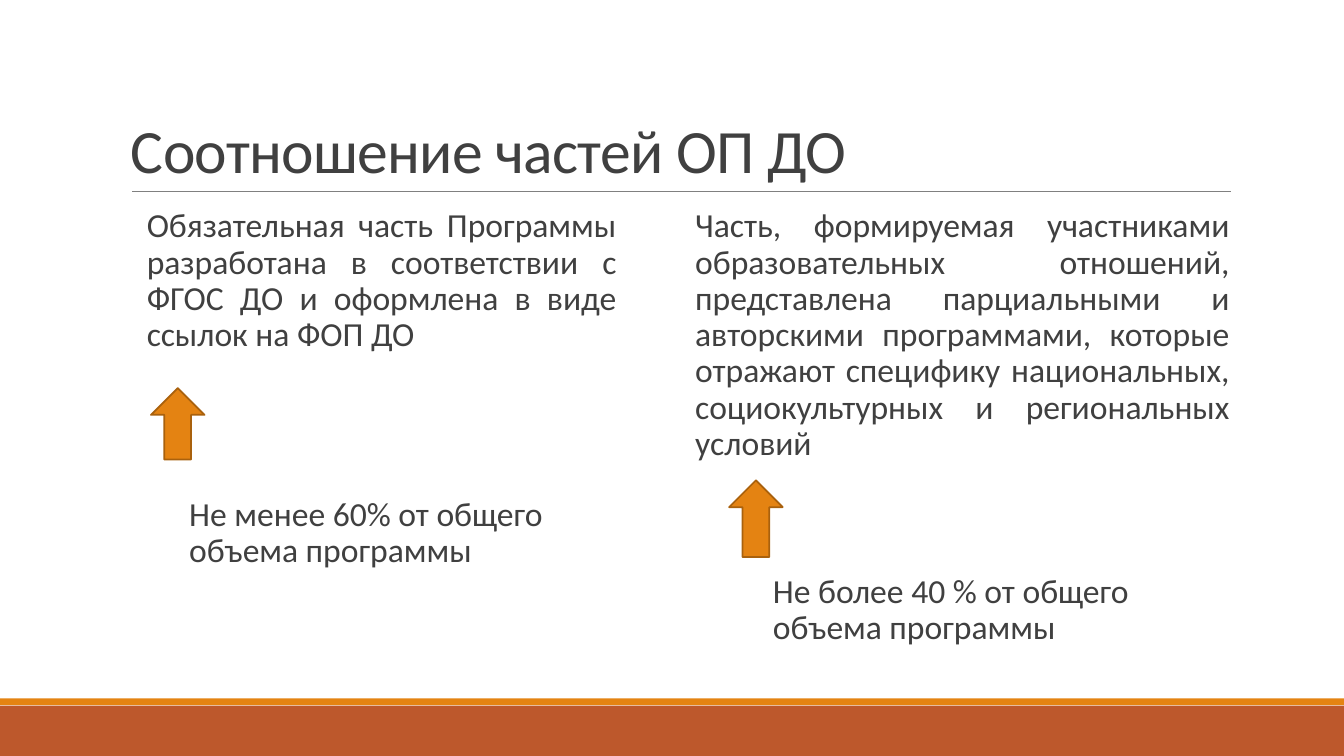
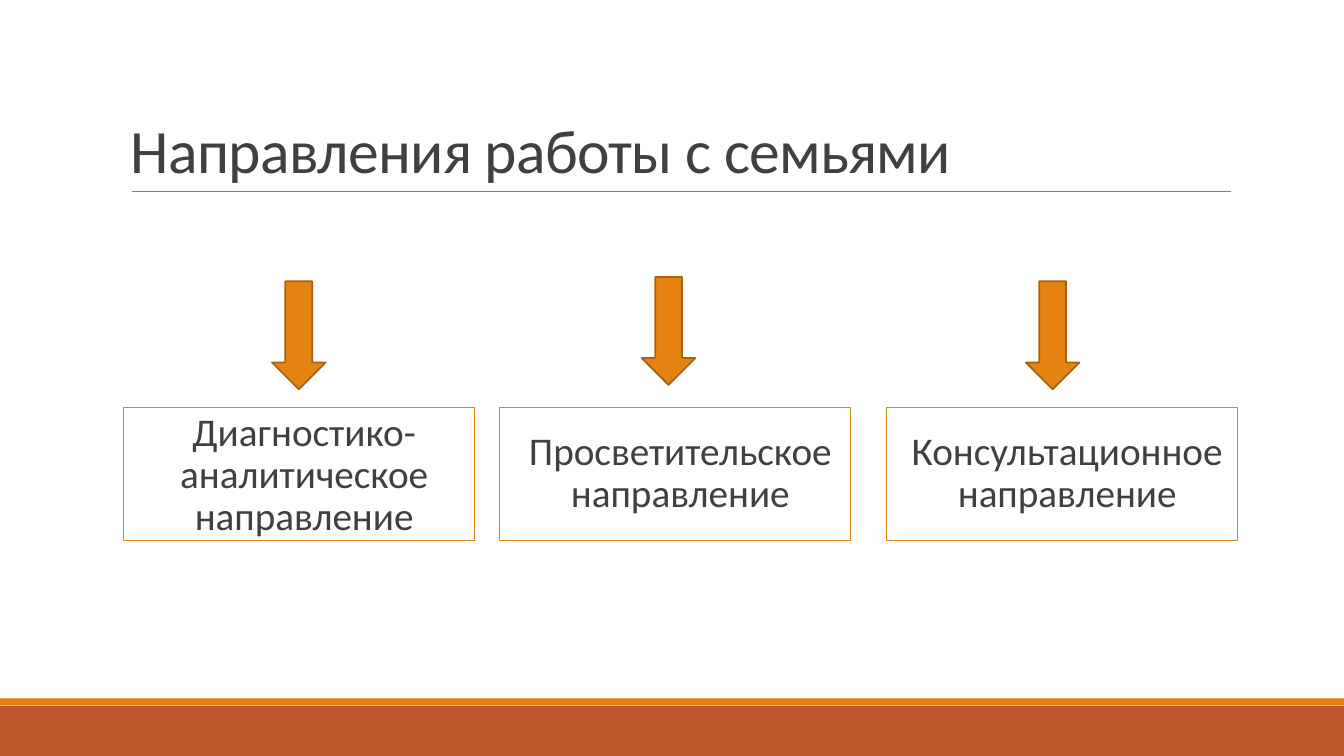
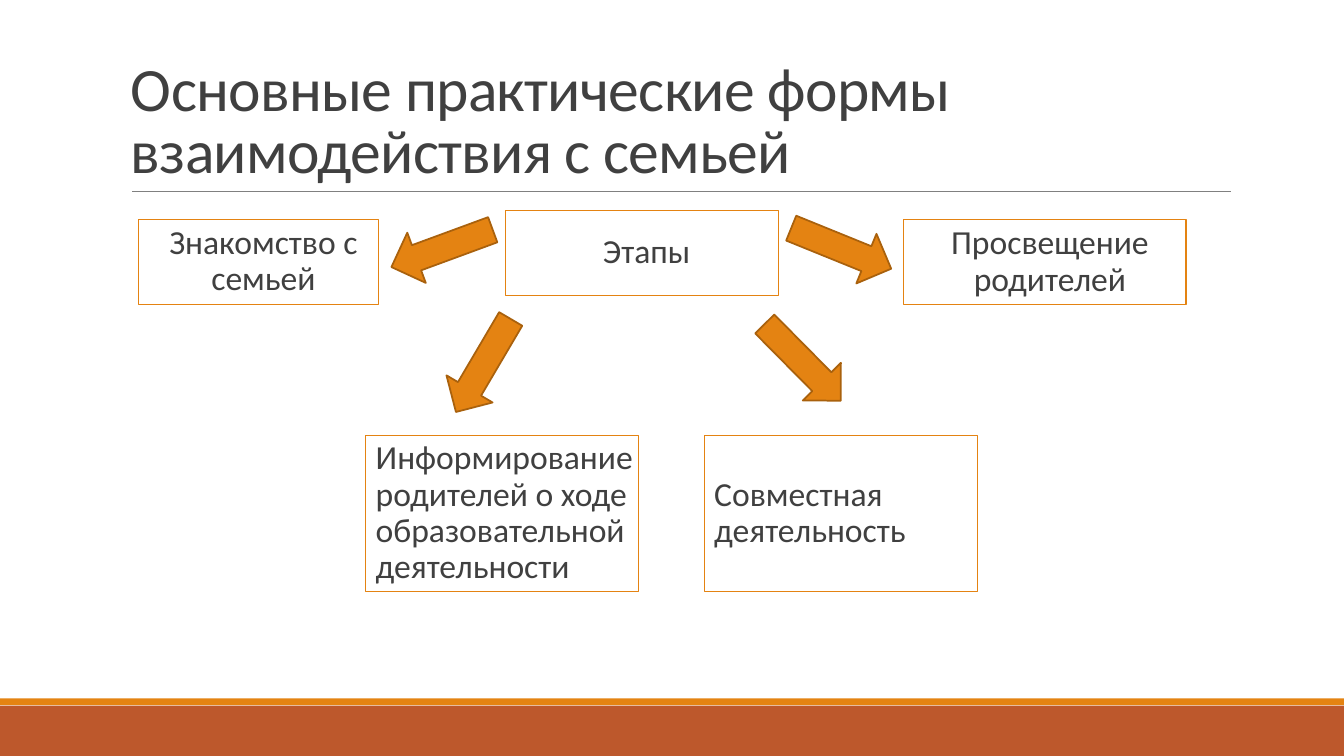
"""Build three slides on the parts of a preschool programme and work with families."""
import pptx
import pptx.dml.color
import pptx.enum.shapes
import pptx.enum.text
import pptx.oxml.xmlchemy
import pptx.util
from pptx.util import Cm

FONT = "Calibri"
INK = "404040"
ORANGE = "E48312"
RUST = "BD582C"
BROWN = "A9610D"
GREY = "808080"

WIDTH, HEIGHT = 33.87, 19.05
ARROW_WIDTH = 1.35
BODY_INSETS = (0.25, 0.13, 0, 0.13)
TITLE_INSETS = (0.25, 0.13, 0.25, 0.13)

SHAPE = pptx.enum.shapes.MSO_SHAPE
ALIGN = pptx.enum.text.PP_ALIGN
ANCHOR = pptx.enum.text.MSO_ANCHOR


def colour(value):
    """Return the colour for a hex string."""
    return pptx.dml.color.RGBColor.from_string(value)


def write(box, text, size, align, anchor, insets, spacing):
    """Put one formatted paragraph into a box and return the paragraph."""
    frame = box.text_frame
    frame.word_wrap = True
    frame.vertical_anchor = anchor
    frame.margin_left, frame.margin_top, frame.margin_right, frame.margin_bottom = map(Cm, insets)
    paragraph = frame.paragraphs[0]
    paragraph.add_run().text = text
    paragraph.alignment = align
    paragraph.line_spacing = spacing
    paragraph.font.name = FONT
    paragraph.font.size = pptx.util.Pt(size)
    paragraph.font.color.rgb = colour(INK)
    return paragraph


def add_preset(page, kind, area, fill=None, line=None, weight=0.75):
    """Add a preset shape with an optional fill and outline."""
    shape = page.shapes.add_shape(kind, *map(Cm, area))
    shape.shadow.inherit = False
    if fill:
        shape.fill.solid()
        shape.fill.fore_color.rgb = colour(fill)
    else:
        shape.fill.background()
    if line:
        shape.line.color.rgb = colour(line)
        shape.line.width = pptx.util.Pt(weight)
    else:
        shape.line.fill.background()
    return shape


def add_rule(page, left, right, top):
    """Add the thin line below the title."""
    rule = page.shapes.add_connector(
        pptx.enum.shapes.MSO_CONNECTOR.STRAIGHT, Cm(left), Cm(top), Cm(right), Cm(top))
    rule.line.color.rgb = colour(GREY)
    rule.line.width = pptx.util.Pt(0.5)
    rule._element.spPr.append(pptx.oxml.xmlchemy.OxmlElement("a:effectLst"))


def add_page(deck, title):
    """Add a slide with the footer bands, the rule and a title."""
    page = deck.slides.add_slide(deck.slide_layouts[6])
    add_preset(page, SHAPE.RECTANGLE, (0, 17.78, WIDTH, 1.27), RUST)
    add_preset(page, SHAPE.RECTANGLE, (0, 17.6, WIDTH, 0.17), ORANGE)
    add_rule(page, 3.33, 31.01, 4.83)
    box = page.shapes.add_textbox(*map(Cm, (3.05, 0.79, 27.94, 4.04)))
    paragraph = write(box, title, 44, ALIGN.LEFT, ANCHOR.BOTTOM, TITLE_INSETS, 0.85)
    paragraph.runs[0].font._element.set("spc", "-50")
    return page


def add_body(page, text, area, align=ALIGN.LEFT):
    """Add plain body text without a frame."""
    box = page.shapes.add_textbox(*map(Cm, area))
    write(box, text, 24, align, ANCHOR.TOP, BODY_INSETS, 0.9)


def add_card(page, text, area, size=24, align=ALIGN.CENTER, anchor=ANCHOR.MIDDLE):
    """Add text in an orange outline."""
    card = add_preset(page, SHAPE.RECTANGLE, area, line=ORANGE)
    paragraph = write(card, text, size, align, anchor, BODY_INSETS, 0.9)
    paragraph.space_before = pptx.util.Pt(12)
    paragraph.space_after = pptx.util.Pt(2)


def add_arrow(page, centre, length=2.72, rotation=0, kind=SHAPE.DOWN_ARROW):
    """Add a block arrow around its centre."""
    across, down = centre
    area = (across - ARROW_WIDTH / 2, down - length / 2, ARROW_WIDTH, length)
    add_preset(page, kind, area, ORANGE, BROWN, 1.25).rotation = rotation


def build_shares(deck):
    """Build the slide on the shares of the programme."""
    page = add_page(deck, "Соотношение частей ОП ДО")
    add_body(page, "Обязательная часть Программы разработана в соответствии с ФГОС ДО "
             "и оформлена в виде ссылок на ФОП ДО", (3.45, 5.13, 12.09, 4.65), ALIGN.JUSTIFY)
    add_body(page, "Часть, формируемая участниками образовательных отношений, представлена "
             "парциальными и авторскими программами, которые отражают специфику национальных, "
             "социокультурных и региональных условий", (17.27, 5.13, 13.72, 6.68), ALIGN.JUSTIFY)
    add_arrow(page, (4.48, 10.68), 1.8, kind=SHAPE.UP_ARROW)
    add_arrow(page, (19.05, 13.07), 1.93, kind=SHAPE.UP_ARROW)
    add_body(page, "Не менее 60% от общего объема программы", (4.52, 12.4, 10.59, 2.4))
    add_body(page, "Не более 40 % от общего объема программы", (19.23, 14.35, 10.59, 2.4))


def build_directions(deck):
    """Build the slide on the directions of work with families."""
    page = add_page(deck, "Направления работы с семьями")
    directions = [
        ("Диагностико-аналитическое направление", 3.12, ANCHOR.TOP, (7.53, 8.45)),
        ("Просветительское направление", 12.6, ANCHOR.MIDDLE, (16.85, 8.34)),
        ("Консультационное направление", 22.35, ANCHOR.MIDDLE, (26.53, 8.45)),
    ]
    for text, left, anchor, centre in directions:
        add_card(page, text, (left, 10.26, 8.84, 3.35), 28, anchor=anchor)
        add_arrow(page, centre)


def build_stages(deck):
    """Build the slide on the stages of interaction with a family."""
    page = add_page(deck, "Основные практические формы взаимодействия с семьей")
    add_card(page, "Этапы", (12.73, 5.31, 6.88, 2.13))
    add_card(page, "Знакомство с семьей", (3.48, 5.54, 6.07, 2.13), anchor=ANCHOR.TOP)
    add_card(page, "Просвещение родителей", (22.78, 5.54, 7.11, 2.13))
    add_card(page, "Информирование родителей о ходе образовательной деятельности",
             (9.22, 10.97, 6.88, 3.94), align=ALIGN.LEFT)
    add_card(page, "Совместная деятельность", (17.75, 10.97, 6.88, 3.94), align=ALIGN.LEFT)
    arrows = [((11.14, 6.26), 69.8), ((12.18, 9.21), 30.5),
              ((21.2, 6.26), 292.1), ((20.23, 9.13), 315.3)]
    for centre, rotation in arrows:
        add_arrow(page, centre, rotation=rotation)


def main():
    """Build and save the deck."""
    deck = pptx.Presentation()
    deck.slide_width, deck.slide_height = Cm(WIDTH), Cm(HEIGHT)
    build_shares(deck)
    build_directions(deck)
    build_stages(deck)
    deck.save("out.pptx")


if __name__ == "__main__":
    main()
